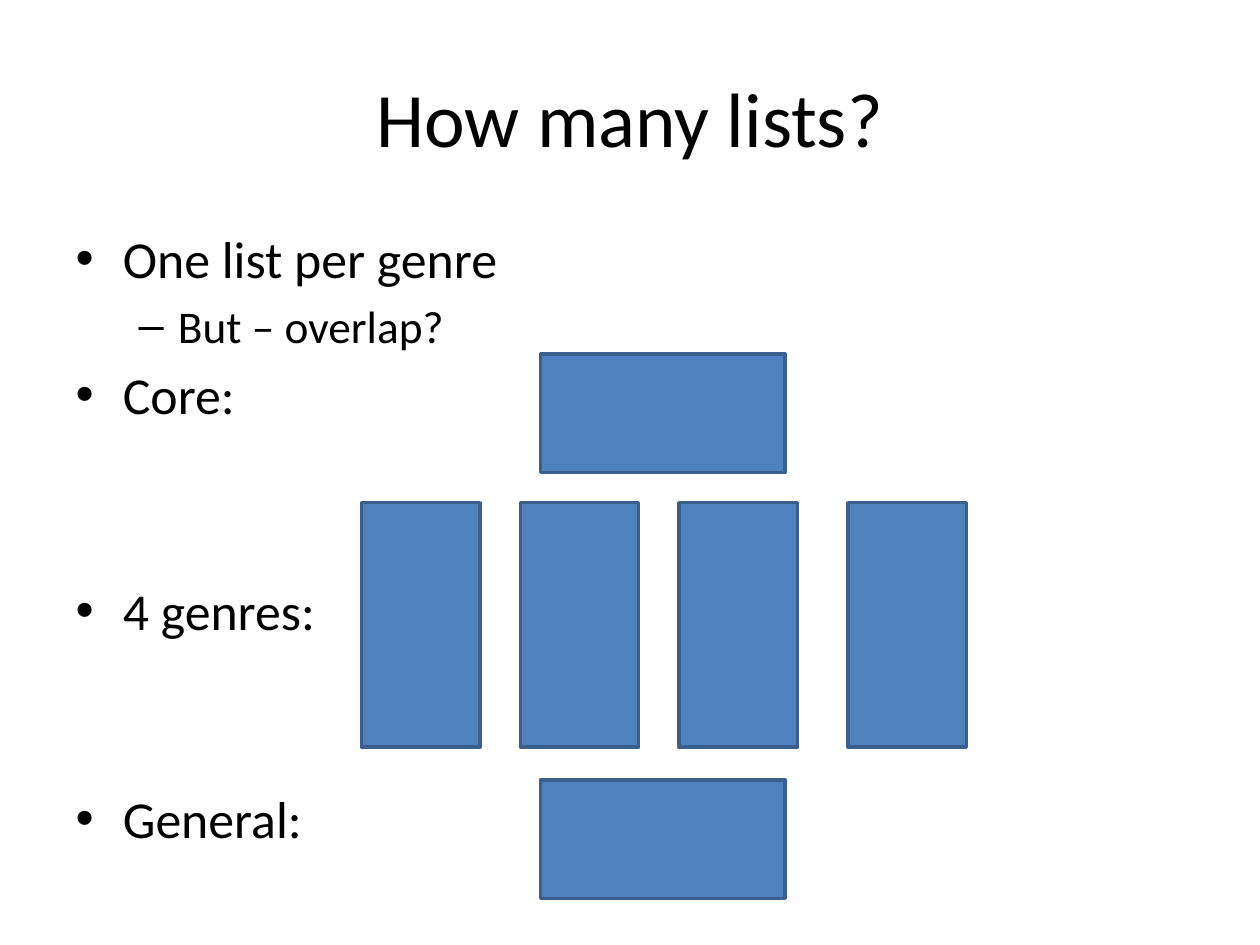
from pptx import Presentation
from pptx.dml.color import RGBColor
from pptx.enum.shapes import MSO_SHAPE as Shape
from pptx.enum.text import MSO_AUTO_SIZE as AutoSize
from pptx.util import Inches, Pt

COLORS = {"text": "000000", "fill": "4F81BD", "line": "3A5F8C"}
FONT = "Calibri"
SHORT_SIDE, LONG_SIDE = 0.94, 1.94
BULLETS = [
    ("One list per genre", 0, None),
    ("But – overlap?", 1, None),
    ("Core:", 0, None),
    ("4 genres:", 0, 88),
    ("General:", 0, 83.3),
]
BODY_SIZES = {0: 29.6, 1: 25.9}


def place(shape, left, top, width, height):
    """Move a shape to a box given in inches."""
    shape.left, shape.top = Inches(left), Inches(top)
    shape.width, shape.height = Inches(width), Inches(height)


def style_paragraph(paragraph, size):
    """Set the font of a whole paragraph."""
    paragraph.font.name = FONT
    paragraph.font.size = Pt(size)
    paragraph.font.color.rgb = RGBColor.from_string(COLORS["text"])


def add_title(slide, left, top, width, height):
    """Fill the title placeholder."""
    title = slide.shapes.title
    place(title, left, top, width, height)
    title.text_frame.text = "How many lists?"
    style_paragraph(title.text_frame.paragraphs[0], 44)


def add_bullets(slide, left, top, width, height):
    """Fill the body placeholder, spacing each label beside its diagram row."""
    body = slide.placeholders[1]
    place(body, left, top, width, height)
    frame = body.text_frame
    frame.text = "\n".join(text for text, _, _ in BULLETS)
    frame.auto_size = AutoSize.NONE
    for paragraph, (_, level, space) in zip(frame.paragraphs, BULLETS):
        paragraph.level = level
        style_paragraph(paragraph, BODY_SIZES[level])
        if space is not None:
            paragraph.space_before = Pt(space)


def add_block(slide, left, top, width, height):
    """Draw one list block."""
    block = slide.shapes.add_shape(
        Shape.RECTANGLE, Inches(left), Inches(top), Inches(width), Inches(height)
    )
    block.shadow.inherit = False
    block.fill.solid()
    block.fill.fore_color.rgb = RGBColor.from_string(COLORS["fill"])
    block.line.color.rgb = RGBColor.from_string(COLORS["line"])
    block.line.width = Pt(2)


def add_list_diagram(slide, left, top):
    """Draw the core block, the four genre blocks and the general block."""
    for row_top in (0, 3.38):
        add_block(slide, left + 1.42, top + row_top, LONG_SIDE, SHORT_SIDE)
    for offset in (0, 1.26, 2.52, 3.86):
        add_block(slide, left + offset, top + 1.18, SHORT_SIDE, LONG_SIDE)


def main():
    """Build and save the presentation."""
    presentation = Presentation()
    presentation.slide_width, presentation.slide_height = Inches(10), Inches(7.5)
    slide = presentation.slides.add_slide(presentation.slide_layouts[1])
    add_title(slide, 0.5, 0.3, 9, 1.25)
    add_bullets(slide, 0.5, 1.75, 9, 4.95)
    add_list_diagram(slide, 2.87, 2.81)
    presentation.save("out.pptx")


if __name__ == "__main__":
    main()
